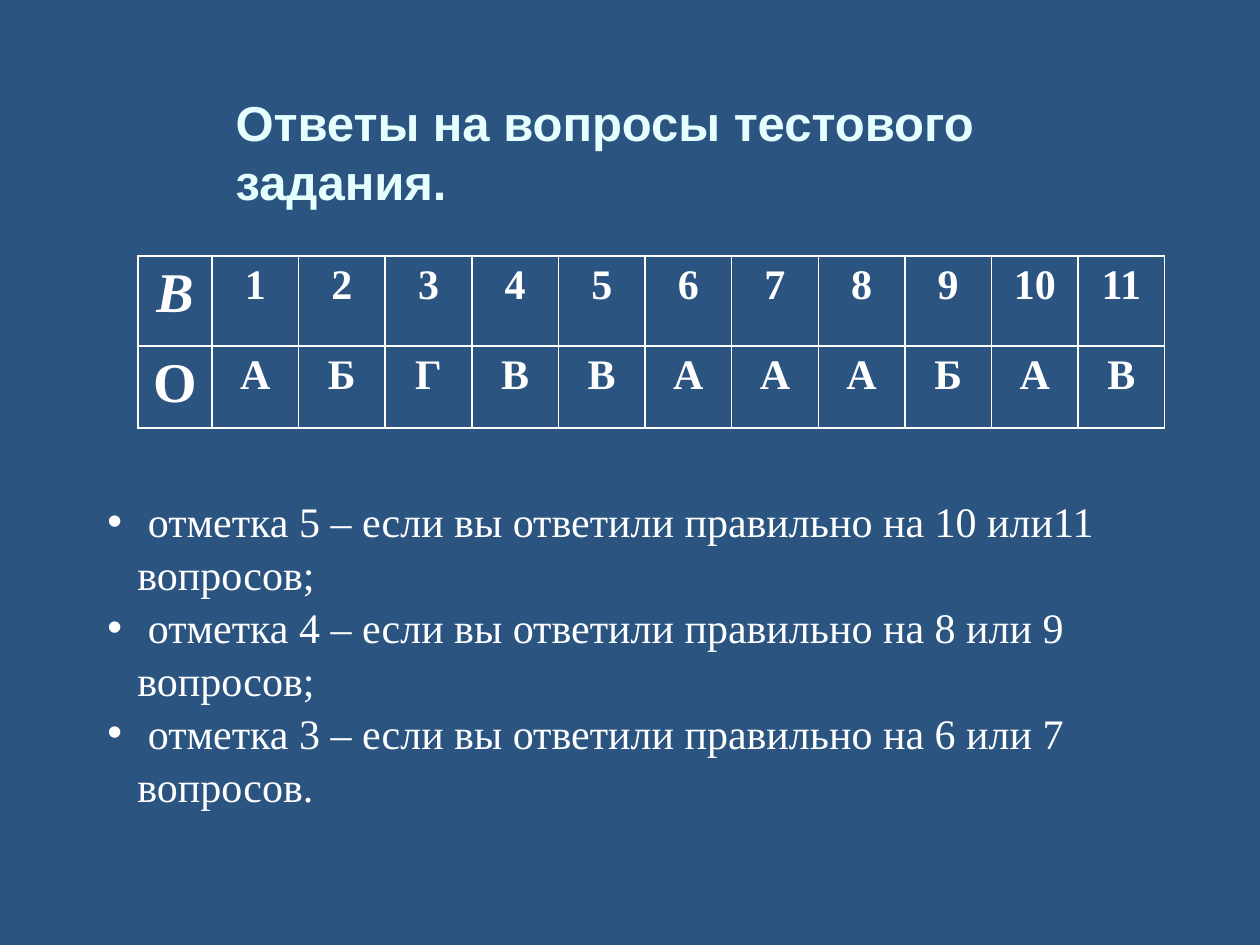
import pptx
import pptx.dml.color
import pptx.enum.text
import pptx.oxml
import pptx.oxml.ns
import pptx.util

PX = 914400 / 126
ANSWERS = "АБГВВАААБАВ"
GRADES = [
    " отметка 5 – если вы ответили правильно на 10 или11 вопросов;",
    " отметка 4 – если вы ответили правильно на 8 или 9 вопросов;",
    " отметка 3 – если вы ответили правильно на 6 или 7 вопросов.",
]


def px(length):
    return pptx.util.Emu(round(length * PX))


def color(value):
    return pptx.dml.color.RGBColor.from_string(value)


def element(xml):
    return pptx.oxml.parse_xml(xml.replace(" ", f" {pptx.oxml.ns.nsdecls('a')} ", 1))


class AnswerSlide:
    background = "2B5481"
    title_color = "E5FFFF"
    text_color = "FFFFFF"
    title_font = "Arial"
    text_font = "Times New Roman"

    def __init__(self, presentation):
        self.slide = presentation.slides.add_slide(presentation.slide_layouts[5])
        fill = self.slide.background.fill
        fill.solid()
        fill.fore_color.rgb = color(self.background)

    def run(self, paragraph, text, size, font, text_color, bold=False, italic=False):
        run = paragraph.add_run()
        run.text = text
        run.font.size = pptx.util.Pt(size)
        run.font.name = font
        run.font.color.rgb = color(text_color)
        run.font.bold = bold
        run.font.italic = italic

    def frame(self, shape):
        frame = shape.text_frame
        frame.word_wrap = True
        frame.auto_size = pptx.enum.text.MSO_AUTO_SIZE.SHAPE_TO_FIT_TEXT
        frame.vertical_anchor = pptx.enum.text.MSO_ANCHOR.MIDDLE
        return frame

    def title(self, text, left, top, width, height):
        shape = self.slide.shapes.title
        shape.left, shape.top = px(left), px(top)
        shape.width, shape.height = px(width), px(height)
        paragraph = self.frame(shape).paragraphs[0]
        paragraph.alignment = pptx.enum.text.PP_ALIGN.LEFT
        self.run(paragraph, text, 28, self.title_font, self.title_color, bold=True)

    def cell(self, cell, text, size, italic):
        paragraph = cell.text_frame.paragraphs[0]
        paragraph.alignment = pptx.enum.text.PP_ALIGN.CENTER
        self.run(paragraph, text, size, self.text_font, self.text_color, True, italic)
        properties = cell._tc.get_or_add_tcPr()
        for side in "LRTB":
            properties.append(element(
                f'<a:ln{side} w="12700"><a:solidFill><a:srgbClr val="{self.text_color}"/>'
                f"</a:solidFill></a:ln{side}>"))
        cell.fill.background()

    def table(self, rows, left, top, width, first_width, heights):
        count = len(rows[0])
        table = self.slide.shapes.add_table(
            len(rows), count, px(left), px(top), px(width), px(sum(heights))).table
        table.first_row = table.horz_banding = False
        for index, column in enumerate(table.columns):
            column.width = px((width - first_width) / (count - 1) if index else first_width)
        for row_index, (texts, height) in enumerate(zip(rows, heights)):
            table.rows[row_index].height = px(height)
            for index, text in enumerate(texts):
                self.cell(table.cell(row_index, index), text,
                          24 if index else 32, italic=row_index == index == 0)

    def bullets(self, texts, left, top, width, height, hanging):
        shape = self.slide.shapes.add_textbox(px(left), px(top), px(width), px(height))
        frame = self.frame(shape)
        for index, text in enumerate(texts):
            paragraph = frame.add_paragraph() if index else frame.paragraphs[0]
            paragraph.line_spacing = 1.05
            properties = paragraph._p.get_or_add_pPr()
            properties.set("marL", str(px(hanging)))
            properties.set("indent", str(-px(hanging)))
            properties.append(element('<a:buFont typeface="Arial"/>'))
            properties.append(element('<a:buChar char="•"/>'))
            self.run(paragraph, text, 24, self.text_font, self.text_color)


def main():
    presentation = pptx.Presentation()
    presentation.slide_width = px(1260)
    presentation.slide_height = px(945)
    slide = AnswerSlide(presentation)
    slide.title("Ответы на вопросы тестового задания.", 223, 115, 912, 72)
    numbers = [str(number + 1) for number in range(len(ANSWERS))]
    slide.table([["В", *numbers], ["О", *ANSWERS]], 138, 256, 1027, 74, [90, 82])
    slide.bullets(GRADES, 95, 493, 1121, 318, 30)
    presentation.save("out.pptx")


if __name__ == "__main__":
    main()
